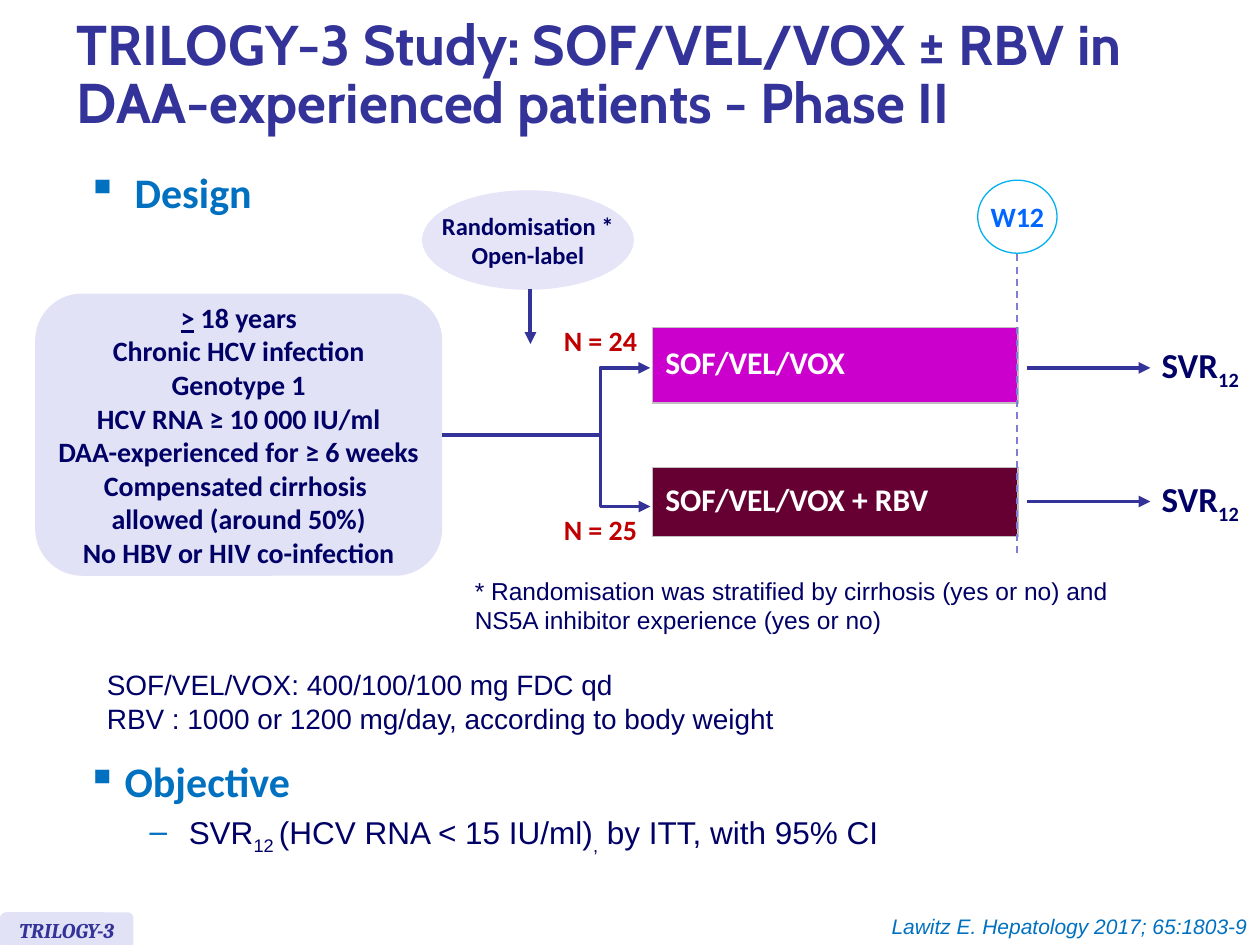
from lxml import etree
from pptx import Presentation
from pptx.dml.color import RGBColor
from pptx.enum.dml import MSO_LINE
from pptx.enum.shapes import MSO_CONNECTOR, MSO_SHAPE
from pptx.enum.text import MSO_ANCHOR, PP_ALIGN
from pptx.oxml.ns import qn
from pptx.util import Inches, Pt

LEFT, MID, RIGHT = PP_ALIGN.LEFT, PP_ALIGN.CENTER, PP_ALIGN.RIGHT
TOP, CENTRE = MSO_ANCHOR.TOP, MSO_ANCHOR.MIDDLE
OVAL, ROUND = MSO_SHAPE.OVAL, MSO_SHAPE.ROUNDED_RECTANGLE
STRAIGHT, ELBOW = MSO_CONNECTOR.STRAIGHT, MSO_CONNECTOR.ELBOW
DASH = MSO_LINE.DASH

NAVY, INDIGO, BLUE = "000066", "333399", "0070C0"
RED, WHITE, PALE = "C00000", "FFFFFF", "E2E2F6"


def color(code):
    return RGBColor.from_string(code)


def add(parent, tag, **attrs):
    return etree.SubElement(parent, qn(tag), attrs)


def style(size, code, name="Calibri", bold=True, italic=False):
    return dict(size=size, code=code, name=name, bold=bold, italic=italic)


class Deck:
    """Holds the current slide and the shared line style."""

    def __init__(self, slide, line=INDIGO, width=2.25):
        self.slide = slide
        self.shapes = slide.shapes
        self.line = line
        self.width = width

    def run(self, para, text, look, base=None, under=None):
        """Add a run; each newline in it becomes a line break."""
        for i, part in enumerate(text.split("\n")):
            if i:
                para.add_line_break()
            run = para.add_run()
            run.text = part
            font = run.font
            font.name, font.size = look["name"], Pt(look["size"])
            font.bold, font.italic = look["bold"], look["italic"]
            font.color.rgb = color(look["code"])
            if under:
                font.underline = True
            if base:
                run._r.get_or_add_rPr().set("baseline", str(base * 1000))

    def fill(self, frame, paras, look, align=LEFT, anchor=TOP, wrap=False):
        """Write paragraphs, each a string or a list of runs."""
        frame.word_wrap = wrap
        frame.vertical_anchor = anchor
        for i, runs in enumerate(paras):
            para = frame.paragraphs[0] if i == 0 else frame.add_paragraph()
            para.alignment = align
            for item in [runs] if isinstance(runs, str) else runs:
                text, more = (item, {}) if isinstance(item, str) else item
                self.run(para, text, look, **more)
        return frame

    def text(self, box, paras, look, **opts):
        shape = self.shapes.add_textbox(*map(Inches, box))
        return self.fill(shape.text_frame, paras, look, **opts)

    def bullet(self, para, mark, left, hang):
        props = para._p.get_or_add_pPr()
        props.set("marL", str(Inches(left)))
        props.set("indent", str(-Inches(hang)))
        add(add(props, "a:buClr"), "a:srgbClr", val=BLUE)
        add(props, "a:buChar", char=mark)

    def shape(self, kind, box, back, paras, look, edge=None, wrap=False):
        shape = self.shapes.add_shape(kind, *map(Inches, box))
        shape.shadow.inherit = False
        shape.fill.solid()
        shape.fill.fore_color.rgb = color(back)
        if edge:
            shape.line.color.rgb = color(edge)
            shape.line.width = Pt(0.75)
        else:
            shape.line.fill.background()
        self.fill(shape.text_frame, paras, look, MID, CENTRE, wrap)
        return shape

    def link(self, start, end, kind=STRAIGHT, ends=(), code=None, width=None):
        """Draw a line; ends lists the arrowheads, headEnd before tailEnd."""
        link = self.shapes.add_connector(kind, *map(Inches, start + end))
        link.line.color.rgb = color(code or self.line)
        link.line.width = Pt(width or self.width)
        props = link._element.spPr
        for tag in ends:
            add(props.find(qn("a:ln")), tag, type="triangle")
        add(props, "a:effectLst")
        return link

    def fork(self, x, top, low, reach):
        """Draw a bracket that opens right, with an arrow on each arm."""
        step = 0.002
        link = self.link((x, top), (x + step, low), ELBOW,
                         ("a:headEnd", "a:tailEnd"))
        geom = link._element.spPr.find(qn("a:prstGeom"))
        marks = geom.find(qn("a:avLst"))
        if marks is None:
            marks = add(geom, "a:avLst")
        bend = round(-reach / step * 100000)
        add(marks, "a:gd", name="adj1", fmla=f"val {bend}")

    def bar(self, box, text, back):
        """Add a treatment arm as a table of one cell."""
        table = self.shapes.add_table(1, 1, *map(Inches, box)).table
        table.first_row = table.horz_banding = False
        cell = table.cell(0, 0)
        self.fill(cell.text_frame, [text], style(18, WHITE), wrap=True)
        cell.vertical_anchor = CENTRE
        cell.text_frame.paragraphs[0].line_spacing = 0.8
        props = cell._tc.get_or_add_tcPr()
        for tag in ("a:lnL", "a:lnR", "a:lnT", "a:lnB"):
            edge = add(props, tag, w=str(Pt(1)))
            add(add(edge, "a:solidFill"), "a:srgbClr", val="C0C0C0")
        cell.fill.solid()
        cell.fill.fore_color.rgb = color(back)


def main():
    prs = Presentation()
    prs.slide_width, prs.slide_height = Inches(10), Inches(7.5)
    deck = Deck(prs.slides.add_slide(prs.slide_layouts[6]))
    body = style(16, NAVY, "Arial", False)
    head = style(24, BLUE)
    sub = dict(base=-25)

    title = deck.text(
        (0.51, 0.08, 9.37, 1.07),
        ["TRILOGY-3 Study: SOF/VEL/VOX ± RBV in DAA-experienced patients"
         " - Phase II"],
        style(32, INDIGO, "Cabin"), anchor=CENTRE, wrap=True)
    title.paragraphs[0].line_spacing = 0.85

    design = deck.text((0.59, 1.27, 1.98, 0.63), ["Design"], head, wrap=True)
    deck.bullet(design.paragraphs[0], "▪", 0.38, 0.38)

    group = deck.shape(
        ROUND, (0.28, 2.33, 3.23, 2.24), PALE,
        [[(">", dict(under=True)), " 18 years\nChronic HCV infection"],
         "Genotype 1", "HCV RNA ≥ 10 000 IU/ml",
         "DAA-experienced for ≥ 6 weeks", "Compensated cirrhosis ",
         "allowed (around 50%)\nNo HBV or HIV co-infection"],
        style(16, NAVY), wrap=True)
    frame = group.text_frame
    frame.margin_left = frame.margin_right = Inches(0.04)

    deck.shape(OVAL, (3.35, 1.51, 1.68, 0.79), "E5E5F7",
               ["Randomisation *", "Open-label"], style(14, NAVY))
    deck.link((4.21, 2.29), (4.21, 2.73), ends=("a:tailEnd",))
    deck.link((3.51, 3.45), (4.76, 3.45)).begin_connect(group, 3)
    deck.fork(5.16, 2.92, 4.02, 0.4)

    arms = [
        ("SOF/VEL/VOX", "CC00CC", 2.6, 0.6, "N = 24", 2.52, 2.92, 2.68),
        ("SOF/VEL/VOX + RBV", "660033", 3.71, 0.55, "N = 25", 4.02, 3.98, 3.74),
    ]
    for name, back, top, high, count, num_y, line_y, end_y in arms:
        deck.bar((5.18, top, 2.9, high), name, back)
        deck.text((4.37, num_y, 0.79, 0.37), [count], style(16, RED),
                  align=MID)
        deck.link((8.15, line_y), (9.13, line_y), ends=("a:tailEnd",))
        deck.text((9.12, end_y, 0.85, 0.44), [["SVR", ("12", sub)]],
                  style(20, NAVY))

    week = deck.link((8.07, 2.02), (8.07, 4.42), code="7E7ED4", width=1)
    week.line.dash_style = DASH
    deck.shape(OVAL, (7.76, 1.43, 0.63, 0.58), WHITE, ["W12"],
               style(16, "0066FF"), edge="00B0F0")

    deck.text((3.67, 4.52, 5.27, 0.57),
              ["* Randomisation was stratified by cirrhosis (yes or no) and",
               "NS5A inhibitor experience (yes or no)"],
              style(14, NAVY, "Arial", False))
    deck.text((0.75, 5.25, 8.58, 0.64),
              ["SOF/VEL/VOX: 400/100/100 mg FDC qd",
               "RBV : 1000 or 1200 mg/day, according to body weight"],
              body, wrap=True)

    goal = deck.text((0.59, 5.95, 9.13, 0.91), ["Objective"], head, wrap=True)
    deck.bullet(goal.paragraphs[0], "▪", 0.3, 0.3)
    point = goal.add_paragraph()
    point.level = 1
    deck.bullet(point, "–", 0.81, 0.31)
    point.space_before = Pt(4)
    for text, base in (("SVR", None), ("12 ", -25),
                       ("(HCV RNA < 15 IU/ml)", None), (",", -25),
                       (" by ITT, with 95% CI", None)):
        deck.run(point, text, style(18, NAVY, "Arial", False), base)

    deck.shape(ROUND, (0, 7.24, 1.06, 0.29), PALE, ["TRILOGY-3"],
               style(12, INDIGO, "Cambria", italic=True))
    deck.text((6.95, 7.2, 3.05, 0.3), ["Lawitz E. Hepatology 2017; 65:1803-9"],
              style(12, BLUE, "Arial", False, True), align=RIGHT)

    prs.save("out.pptx")


if __name__ == "__main__":
    main()
